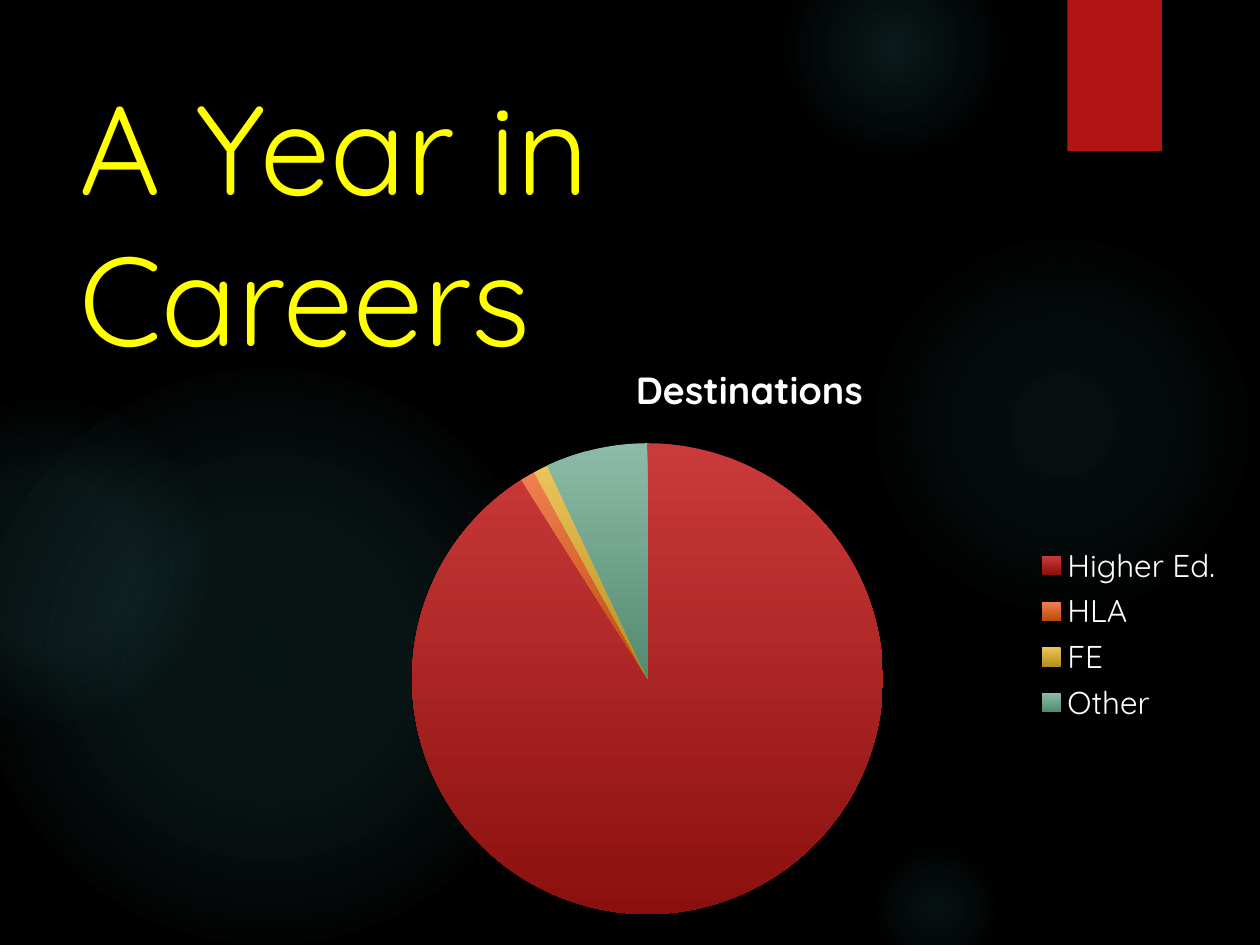
from dataclasses import dataclass
from lxml.etree import SubElement
from pptx import Presentation
from pptx.chart.data import CategoryChartData
from pptx.dml.color import RGBColor
from pptx.enum.chart import XL_CHART_TYPE as ChartType, XL_LEGEND_POSITION as LegendPosition
from pptx.enum.shapes import MSO_SHAPE as Shape
from pptx.enum.text import MSO_ANCHOR as Anchor, PP_ALIGN as Align
from pptx.oxml import parse_xml
from pptx.oxml.ns import nsdecls, qn
from pptx.util import Pt


@dataclass(frozen=True)
class Theme:
    font: str = "Quicksand"
    background: str = "000000"
    glow: str = "50B9C1"
    tab: str = "B01513"
    title: str = "FFFF00"
    text: str = "FFFFFF"
    title_size: float = 72
    chart_title_size: float = 21.6
    legend_size: float = 18


THEME = Theme()

# left, top, diameter, then (position %, opacity %) stops
GLOWS = [
    (496, 132, 222, [(0, 7), (36, 6), (69, 0)]),
    (448, -36, 126, [(0, 14), (36, 7), (73, 0)]),
    (496, 480, 78, [(0, 9), (36, 5), (66, 0)]),
    (-12, 210, 330, [(0, 11), (36, 10), (75, 0)]),
    (-66, 228, 186, [(0, 8), (36, 8), (72, 0)]),
]

# category, value, top colour, bottom colour
DESTINATIONS = [
    ("Higher Ed.", 91, "CB3A3A", "8A100E"),
    ("HLA", 1, "F08050", "BC4C0A"),
    ("FE", 1, "EBC55C", "B68E1A"),
    ("Other", 7, "8CBCA7", "538A70"),
]


def style_font(font, size, color, bold=False):
    values = {"name": THEME.font, "size": Pt(size), "bold": bold}
    for name, value in values.items():
        setattr(font, name, value)
    font.color.rgb = RGBColor.from_string(color)


def add_plain_shape(page, kind, *frame):
    shape = page.shapes.add_shape(kind, *map(Pt, frame))
    shape.shadow.inherit = False
    shape.line.fill.background()
    return shape


def add_glow(page, left, top, diameter, stops):
    """Add a circle that fades out from its centre."""
    glow = add_plain_shape(page, Shape.OVAL, left, top, diameter, diameter)
    stop_xml = "".join(
        f'<a:gs pos="{position * 1000}"><a:srgbClr val="{THEME.glow}">'
        f'<a:alpha val="{opacity * 1000}"/></a:srgbClr></a:gs>'
        for position, opacity in stops
    )
    gradient = parse_xml(
        f'<a:gradFill {nsdecls("a")} rotWithShape="1"><a:gsLst>{stop_xml}</a:gsLst>'
        '<a:path path="circle"><a:fillToRect l="50000" t="50000" r="50000" b="50000"/>'
        "</a:path></a:gradFill>"
    )
    glow.element.spPr.find(qn("a:prstGeom")).addnext(gradient)


def add_tab(page):
    tab = add_plain_shape(page, Shape.RECTANGLE, 610, 0, 54, 86.4)
    tab.fill.solid()
    tab.fill.fore_color.rgb = RGBColor.from_string(THEME.tab)
    effects = tab.element.spPr.find(qn("a:effectLst"))
    effects.append(parse_xml(
        f'<a:outerShdw {nsdecls("a")} blurRad="{Pt(3)}" dist="{Pt(2)}" dir="5400000">'
        '<a:srgbClr val="000000"><a:alpha val="45000"/></a:srgbClr></a:outerShdw>'
    ))


def add_title(page, text):
    box = page.shapes.add_textbox(*map(Pt, (38.2, 36, 555.8, 110)))
    frame = box.text_frame
    frame.word_wrap = True
    frame.vertical_anchor = Anchor.TOP
    para = frame.paragraphs[0]
    para.alignment = Align.LEFT
    span = para.add_run()
    span.text = text
    style_font(span.font, THEME.title_size, THEME.title)


def set_plot_layout(chart, **fractions):
    """Fix the inner plot area as fractions of the chart frame."""
    plot_area = chart.element.chart.plotArea
    for old in plot_area.findall(qn("c:layout")):
        plot_area.remove(old)
    layout = parse_xml(f'<c:layout {nsdecls("c")}/>')
    manual = SubElement(layout, qn("c:manualLayout"))
    settings = {"layoutTarget": "inner", "xMode": "edge", "yMode": "edge", **fractions}
    for name, value in settings.items():
        SubElement(manual, qn(f"c:{name}")).set("val", str(value))
    plot_area.insert(0, layout)


def add_pie(page, title):
    data = CategoryChartData()
    data.categories = [row[0] for row in DESTINATIONS]
    data.add_series(title, [row[1] for row in DESTINATIONS])
    frame = page.shapes.add_chart(ChartType.PIE, *map(Pt, (150.5, 192, 555.8, 340.6)), data)
    chart = frame.chart
    style_font(chart.font, THEME.legend_size, THEME.text)

    chart.has_title = True
    span = chart.chart_title.text_frame.paragraphs[0].add_run()
    span.text = title
    style_font(span.font, THEME.chart_title_size, THEME.text, bold=True)
    chart.chart_title.include_in_layout = False

    chart.has_legend = True
    chart.legend.position = LegendPosition.RIGHT
    chart.legend.include_in_layout = False
    style_font(chart.legend.font, THEME.legend_size, THEME.text)

    plot = chart.plots[0]
    plot.vary_by_categories = True
    for index, (_, _, *colors) in enumerate(DESTINATIONS):
        slice_format = plot.series[0].points[index].format
        slice_format.line.fill.background()
        fill = slice_format.fill
        fill.gradient()
        fill.gradient_angle = 270
        for stop, color, position in zip(fill.gradient_stops, colors, (0, 1)):
            stop.color.rgb = RGBColor.from_string(color)
            stop.position = position
    set_plot_layout(chart, x=0.15, y=0.18, w=0.49, h=0.79)


def main():
    deck = Presentation()
    deck.slide_width, deck.slide_height = Pt(720), Pt(540)
    page = deck.slides.add_slide(deck.slide_layouts[6])
    page.background.fill.solid()
    page.background.fill.fore_color.rgb = RGBColor.from_string(THEME.background)
    for glow in GLOWS:
        add_glow(page, *glow)
    add_tab(page)
    add_title(page, "A Year in Careers")
    add_pie(page, "Destinations")
    deck.save("out.pptx")


if __name__ == "__main__":
    main()
